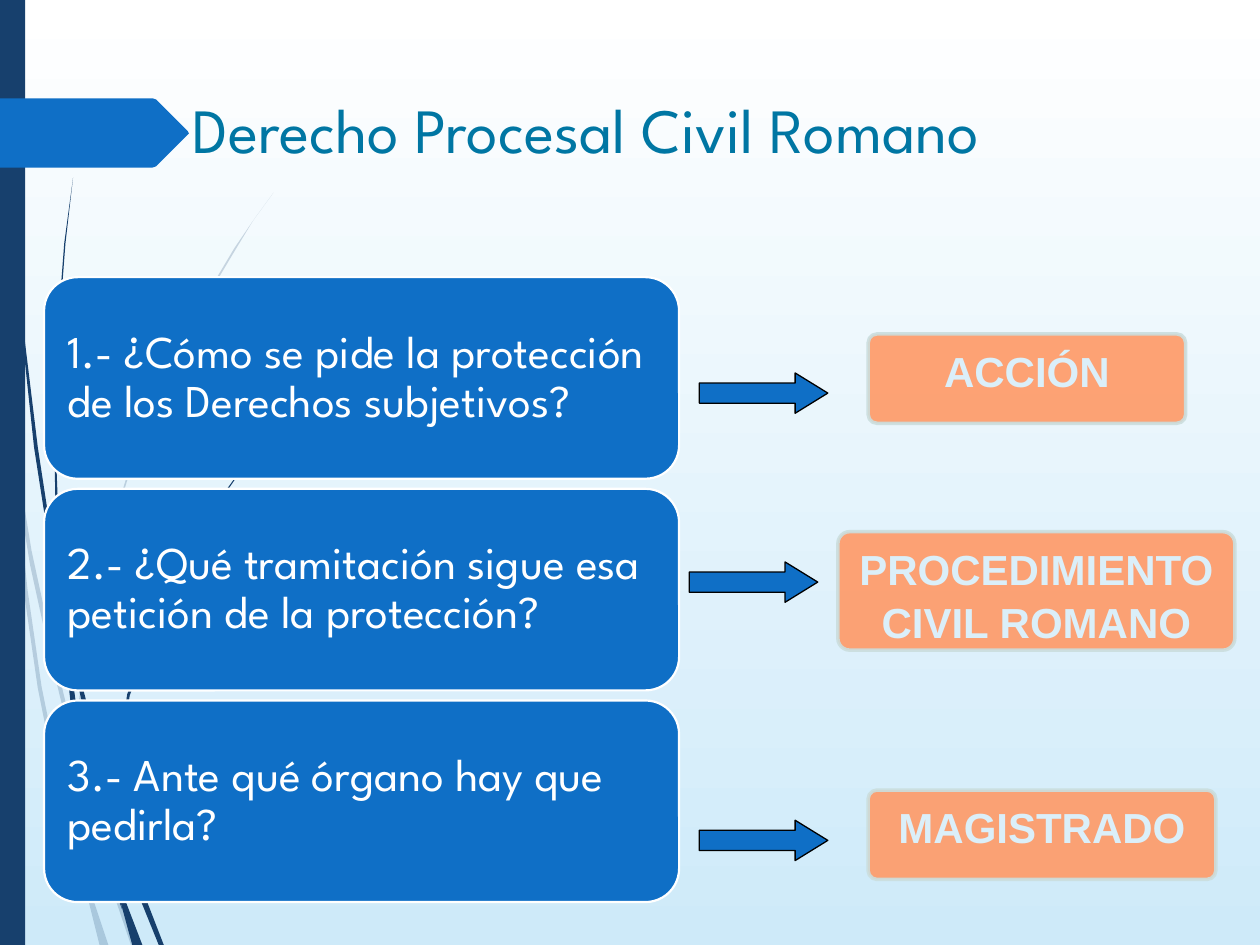
from lxml import etree
from pptx import Presentation
from pptx.dml.color import RGBColor
from pptx.enum.shapes import MSO_SHAPE
from pptx.enum.text import MSO_ANCHOR, MSO_AUTO_SIZE, PP_ALIGN
from pptx.oxml.ns import qn
from pptx.util import Inches, Pt

RECT, ROUND = MSO_SHAPE.RECTANGLE, MSO_SHAPE.ROUNDED_RECTANGLE
ARROW = MSO_SHAPE.RIGHT_ARROW
TOP, MIDDLE = MSO_ANCHOR.TOP, MSO_ANCHOR.MIDDLE
LEFT, CENTER = PP_ALIGN.LEFT, PP_ALIGN.CENTER
NO_FIT = MSO_AUTO_SIZE.NONE

COLORS = {
    "white": "FFFFFF", "sky": "CEEAF9", "navy": "17406D", "blue": "0F6FC6",
    "title": "0076A3", "orange": "FF9966", "edge": "CBDEDE",
    "pale": "DBEFF9", "black": "000000",
}
HEAD = "League Spartan"
TITLE = "Derecho Procesal Civil Romano"

ASKS = [
    "1.- ¿Cómo se pide la protección de los Derechos subjetivos?",
    "2.- ¿Qué tramitación sigue esa petición de la protección?",
    "3.- Ante qué órgano hay que pedirla?",
]
REPLIES = [
    ("ACCIÓN", (6.89, 2.65, 2.52, 0.71)),
    ("PROCEDIMIENTO CIVIL ROMANO", (6.65, 4.22, 3.15, 0.94)),
    ("MAGISTRADO", (6.89, 6.27, 2.76, 0.71)),
]
ARROWS = [(5.55, 2.96), (5.47, 4.46), (5.55, 6.51)]

FAINT = [
    [(0.08, 3.5), (0.06, 3.22), (0, 2.82), (0, 2.99), (0.07, 3.44)],
    [(0.4, 5.22), (0.59, 5.99), (0.59, 5.86), (0.43, 5.2), (0.25, 4.37),
     (0.1, 3.45), (0.12, 3.76), (0.24, 4.49)],
    [(0.64, 6.07), (0.61, 5.96), (0.61, 6.1), (0.85, 6.94), (1.04, 7.5),
     (1.08, 7.5), (0.88, 6.92)],
    [(0.64, 6.83), (0.48, 6.19), (0.33, 5.45), (0.22, 4.69), (0.12, 3.76),
     (0.08, 3.5), (0.19, 4.7), (0.3, 5.46), (0.45, 6.21), (0.64, 6.93),
     (0.7, 7.14), (0.69, 7.07)],
    [(0.61, 5.84), (0.76, 4.62), (1.11, 3.49), (1.59, 2.45), (1.87, 1.98),
     (2.01, 1.75), (2.17, 1.53), (2.01, 1.75), (1.86, 1.97), (1.58, 2.44),
     (1.1, 3.48), (0.75, 4.61), (0.59, 5.84), (0.61, 5.96)],
    [(0.65, 6.83), (0.7, 7.14), (0.79, 7.5), (0.86, 7.5), (0.73, 7.11)],
]
SOLID = [
    [(0.05, 1.1), (0.14, 2.33), (0.27, 3.55), (0.46, 4.77), (0.47, 4.81),
     (0.45, 4.53), (0.3, 3.55), (0.15, 2.32), (0.06, 1.09), (0.03, 0),
     (0.02, 0), (0.03, 0.48)],
    [(0.73, 5.92), (0.88, 6.45), (0.88, 6.31), (0.77, 5.9), (0.62, 5.31),
     (0.5, 4.72), (0.53, 5.05)],
    [(0.94, 6.49), (0.91, 6.41), (0.91, 6.56), (1.09, 7.08), (1.26, 7.5),
     (1.3, 7.5), (1.13, 7.06)],
    [(0.91, 6.91), (0.81, 6.57), (0.6, 5.56), (0.53, 5.05), (0.47, 4.77),
     (0.56, 5.57), (0.77, 6.59), (0.92, 7.08), (0.97, 7.22)],
    [(0.5, 4.72), (0.48, 4.53), (0.44, 3.49), (0.48, 2.45), (0.52, 1.93),
     (0.58, 1.41), (0.51, 1.93), (0.47, 2.45), (0.43, 3.49), (0.45, 4.49),
     (0.49, 4.72)],
    [(0.91, 6.33), (1.03, 5.52), (1.31, 4.76), (1.69, 4.06), (1.91, 3.74),
     (2.16, 3.44), (1.91, 3.73), (1.68, 4.05), (1.29, 4.74), (1.01, 5.51),
     (0.88, 6.31), (0.91, 6.41)],
    [(0.88, 6.45), (0.91, 6.91), (0.96, 7.17), (1.05, 7.5), (1.13, 7.5),
     (1, 7.16), (0.91, 6.56)],
]
TAG = [(0, 0.78), (1.21, 0.78), (1.24, 0.79), (1.49, 1.04), (1.5, 1.06),
       (1.49, 1.07), (1.24, 1.32), (1.21, 1.33), (0, 1.33)]


def rgb(name):
    return RGBColor.from_string(COLORS[name])


def fade(part, pct):
    for tone in part.iter(qn("a:srgbClr")):
        etree.SubElement(tone, qn("a:alpha"), val=str(pct * 1000))


def paint(shape, fill, edge=None, width=0):
    shape.shadow.inherit = False
    shape.fill.solid()
    shape.fill.fore_color.rgb = rgb(fill)
    if edge:
        shape.line.color.rgb = rgb(edge)
        shape.line.width = Pt(width)
    else:
        shape.line.fill.background()


def add_form(shapes, points, fill):
    first, *rest = [(Inches(x), Inches(y)) for x, y in points]
    pen = shapes.build_freeform(*first)
    pen.add_line_segments(rest, close=True)
    form = pen.convert_to_shape()
    paint(form, fill)
    return form


def add_box(shapes, kind, box, *look):
    shape = shapes.add_shape(kind, *map(Inches, box))
    paint(shape, *look)
    return shape


def write(shape, text, font, size, color, anchor, align=LEFT, bold=False):
    frame = shape.text_frame
    frame.word_wrap = True
    frame.auto_size = NO_FIT
    frame.vertical_anchor = anchor
    frame.text = text
    para = frame.paragraphs[0]
    para.alignment = align
    para.font.name = font
    para.font.size = Pt(size)
    para.font.bold = bold
    para.font.color.rgb = rgb(color)
    return frame


def main():
    deck = Presentation()
    deck.slide_width, deck.slide_height = Inches(10), Inches(7.5)
    slide = deck.slides.add_slide(deck.slide_layouts[5])
    shapes = slide.shapes

    back = slide.background.fill
    back.gradient()
    back.gradient_angle = 270
    for stop, spot, name in zip(back.gradient_stops, (0, 1), ("white", "sky")):
        stop.position = spot
        stop.color.rgb = rgb(name)

    for points in FAINT:
        fade(add_form(shapes, points, "navy").element.spPr, 20)
    for points in SOLID:
        add_form(shapes, points, "navy")
    add_box(shapes, RECT, (0, 0, 0.2, 7.5), "navy")
    add_form(shapes, TAG, "blue")

    title = shapes.title
    title.left, title.top = Inches(1.43), Inches(0.67)
    title.width, title.height = Inches(8.73), Inches(1.02)
    write(title, TITLE, HEAD, 36, "title", TOP)
    shapes.element.append(title.element)

    for text, box in REPLIES:
        reply = add_box(shapes, ROUND, box, "orange", "edge", 2)
        reply.adjustments[0] = 0.1
        fade(reply.element.spPr, 90)
        frame = write(reply, text, "Arial", 24, "pale", TOP, CENTER, True)
        frame.paragraphs[0].line_spacing = 1.05

    for left, top in ARROWS:
        arrow = add_box(shapes, ARROW, (left, top, 1.02, 0.32),
                        "blue", "black", 0.75)
        arrow.adjustments[1] = 0.81

    for row, text in enumerate(ASKS):
        box = (0.35, 2.2 + row * 1.68, 5.04, 1.6)
        ask = add_box(shapes, ROUND, box, "blue", "white", 1.25)
        frame = write(ask, text, HEAD, 26, "white", MIDDLE)
        frame.margin_left = frame.margin_right = Inches(0.11)
        frame.margin_top = frame.margin_bottom = Inches(0.11)
        frame.paragraphs[0].line_spacing = 0.9

    deck.save("out.pptx")


if __name__ == "__main__":
    main()
